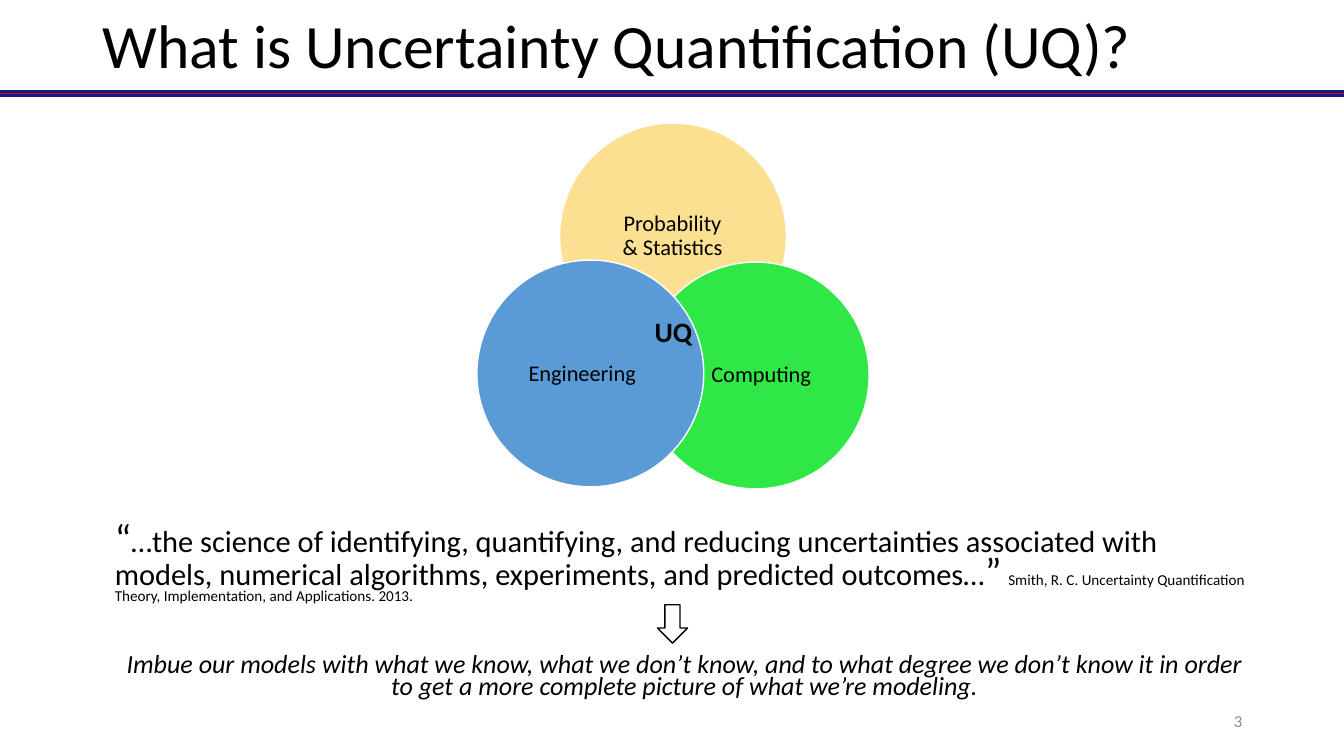
"""Build a slide that defines uncertainty quantification with a three-circle diagram."""
from dataclasses import dataclass

from lxml.etree import SubElement
from pptx import Presentation
from pptx.dml.color import RGBColor
from pptx.enum.shapes import MSO_CONNECTOR, MSO_SHAPE
from pptx.enum.text import MSO_ANCHOR, PP_ALIGN
from pptx.oxml.ns import qn
from pptx.util import Inches, Pt


@dataclass(frozen=True)
class Theme:
    font: str = "Calibri"
    black: str = "000000"
    white: str = "FFFFFF"
    gray: str = "8C8C8C"
    navy: str = "121981"
    red: str = "D40805"
    yellow: str = "FCE092"
    green: str = "30E845"
    blue: str = "5B9BD5"
    title: float = 44
    quote: float = 21.7
    mark: float = 27.9
    citation: float = 10.8
    goal: float = 18.6
    label: float = 16
    center: float = 20
    number: float = 12


THEME = Theme()
TITLE = "What is Uncertainty Quantification (UQ)?"
RULES = [(THEME.navy, 5), (THEME.red, 1)]
DIAMETER = 2.25
CIRCLES = [
    ((5.55, 1.22), THEME.yellow),
    ((6.37, 2.6), THEME.green),
    ((4.73, 2.58), THEME.blue),
]
LABELS = [
    ("Probability & Statistics", (6.15, 1.84, 1.04, 1.01), THEME.label, False),
    ("Computing", (6.95, 3.17, 1.2, 1.1), THEME.label, False),
    ("Engineering", (5.1, 3.09, 1.35, 1.24), THEME.label, False),
    ("UQ", (6.08, 2.76, 1.2, 1.1), THEME.center, True),
]
QUOTE = [
    ("“", THEME.mark),
    ("…the science of identifying, quantifying, and reducing uncertainties associated with "
     "models, numerical algorithms, experiments, and predicted outcomes…", THEME.quote),
    ("”", THEME.mark),
    (" ", THEME.quote),
    ("Smith, R. C. Uncertainty Quantification Theory, Implementation, and Applications. 2013.",
     THEME.citation),
]
GOAL = ("Imbue our models with what we know, what we don’t know, and to what degree we don’t "
        "know it in order to get a more complete picture of what we’re modeling.")


def add_box(page, place, anchor=MSO_ANCHOR.MIDDLE, inset=None):
    frame = page.shapes.add_textbox(*map(Inches, place)).text_frame
    frame.word_wrap = True
    frame.vertical_anchor = anchor
    if inset is not None:
        frame.margin_left = frame.margin_right = Inches(inset)
        frame.margin_top = frame.margin_bottom = Inches(inset)
    return frame


def style_paragraph(para, align, spacing):
    para.alignment = align
    para.line_spacing = spacing
    return para


def add_span(para, text, size, color=THEME.black, bold=False, italic=False):
    span = para.add_run()
    span.text = text
    span.font.name = THEME.font
    span.font.size = Pt(size)
    span.font.color.rgb = RGBColor.from_string(color)
    span.font.bold = bold
    span.font.italic = italic


def add_outlined(page, kind, place, fill, line):
    shape = page.shapes.add_shape(kind, *map(Inches, place))
    shape.shadow.inherit = False
    shape.fill.solid()
    shape.fill.fore_color.rgb = RGBColor.from_string(fill)
    shape.line.color.rgb = RGBColor.from_string(line)
    shape.line.width = Pt(1)


def add_rule(page, width, color, weight):
    height = Inches(0.93)
    rule = page.shapes.add_connector(MSO_CONNECTOR.STRAIGHT, 0, height, width, height)
    rule.line.color.rgb = RGBColor.from_string(color)
    rule.line.width = Pt(weight)
    SubElement(rule._element.spPr, qn("a:effectLst"))


def main():
    deck = Presentation()
    deck.slide_width, deck.slide_height = Inches(13.33), Inches(7.5)
    page = deck.slides.add_slide(deck.slide_layouts[6])

    for color, weight in RULES:
        add_rule(page, deck.slide_width, color, weight)
    for corner, color in CIRCLES:
        add_outlined(page, MSO_SHAPE.OVAL, (*corner, DIAMETER, DIAMETER), color, THEME.white)
    for text, place, size, bold in LABELS:
        label = add_box(page, place, inset=0)
        para = style_paragraph(label.paragraphs[0], PP_ALIGN.CENTER, 0.9)
        add_span(para, text, size, bold=bold)

    title = add_box(page, (0.92, -0.24, 11.5, 1.45))
    add_span(style_paragraph(title.paragraphs[0], PP_ALIGN.LEFT, 0.9), TITLE, THEME.title)

    body = add_box(page, (1.04, 5.17, 11.5, 1.91), MSO_ANCHOR.TOP)
    quote = style_paragraph(body.paragraphs[0], PP_ALIGN.LEFT, 0.7)
    for text, size in QUOTE:
        add_span(quote, text, size)
    goal = style_paragraph(body.add_paragraph(), PP_ALIGN.CENTER, 0.7)
    goal.space_before = Pt(37)
    add_span(goal, GOAL, THEME.goal, italic=True)

    number = add_box(page, (9.42, 6.95, 3, 0.4))
    para = style_paragraph(number.paragraphs[0], PP_ALIGN.RIGHT, 1.0)
    add_span(para, "3", THEME.number, THEME.gray)
    add_outlined(page, MSO_SHAPE.DOWN_ARROW, (6.52, 6, 0.3, 0.38), THEME.white, THEME.black)
    deck.save("out.pptx")


if __name__ == "__main__":
    main()
